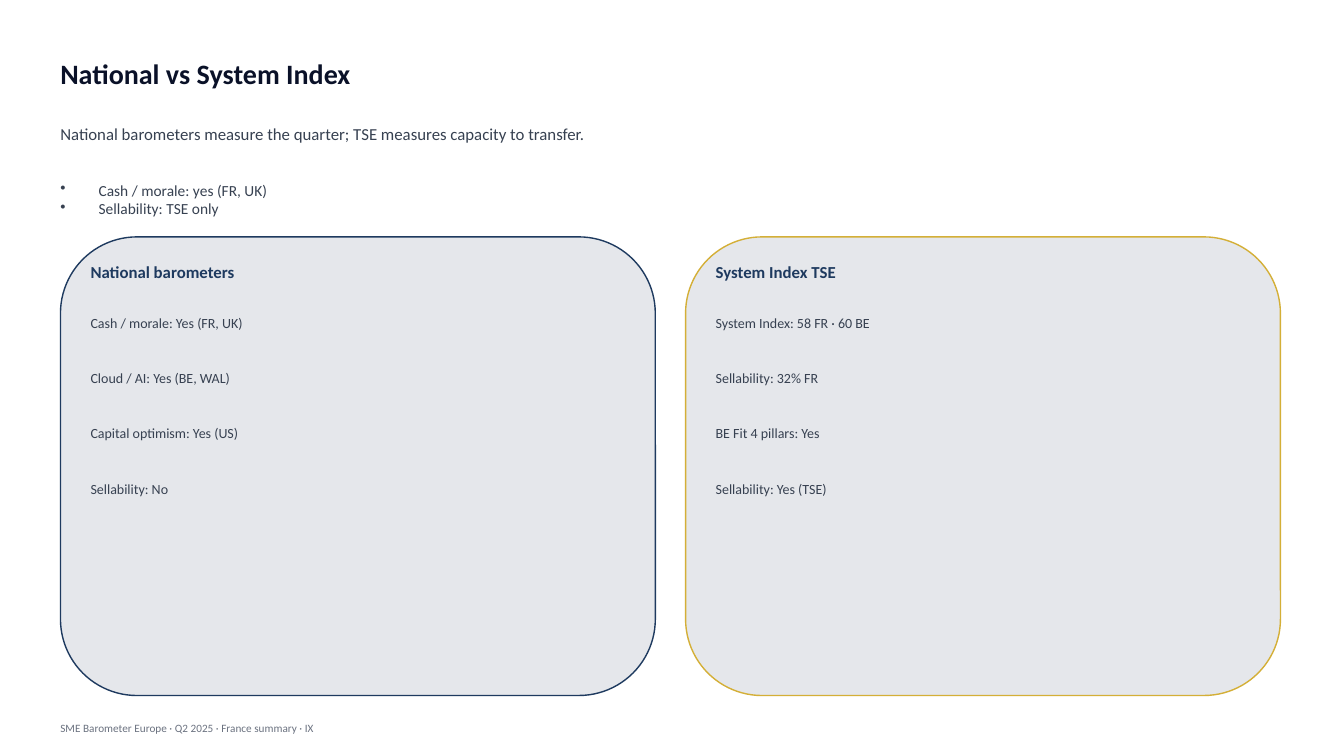
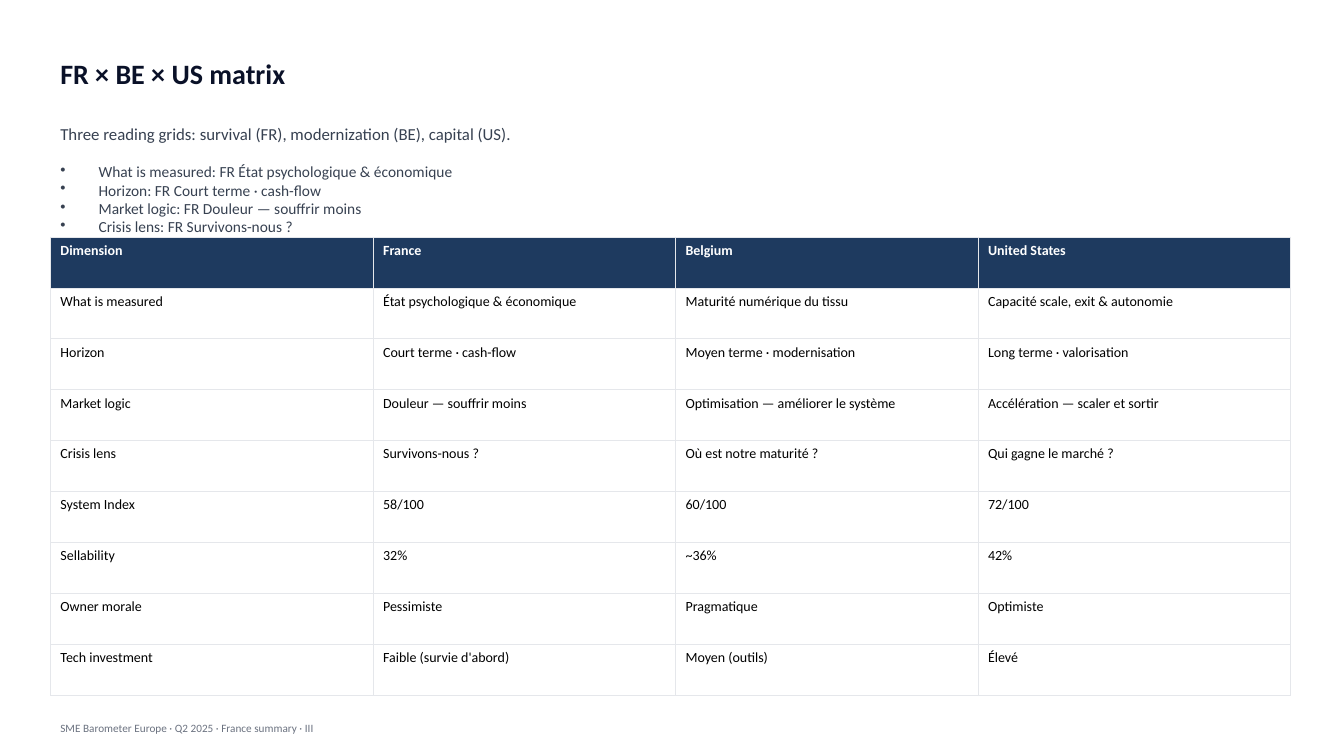
from dataclasses import dataclass

from lxml.etree import SubElement
from pptx import Presentation
from pptx.dml.color import RGBColor
from pptx.enum.shapes import MSO_SHAPE as Shape
from pptx.enum.text import MSO_ANCHOR as Anchor
from pptx.oxml.ns import qn
from pptx.slide import Slide
from pptx.table import _Cell as Cell
from pptx.text.text import _Paragraph as Paragraph
from pptx.util import Inches, Pt

COLORS = {
    "ink": "0A1128",
    "body": "374151",
    "muted": "6B7280",
    "navy": "1E3A5F",
    "gold": "D4AF37",
    "grey": "E5E7EB",
    "white": "FFFFFF",
    "black": "000000",
}
FONT = "Calibri"
LEFT, WIDTH = 0.5, 12.3
CONTENT_TOP, CONTENT_HEIGHT = 2.35, 4.55
FOOTER = "SME Barometer Europe · Q2 2025 · France summary · "


@dataclass(frozen=True)
class Style:
    size: float
    color: str
    bold: bool = False


TITLE = Style(20, "ink", True)
LEAD = Style(12, "body")
BULLET = Style(11, "body")
CARD_TITLE = Style(12, "navy", True)
CARD_LINE = Style(10, "body")
TABLE_HEAD = Style(10, "white", True)
TABLE_BODY = Style(10, "black")
FOOTNOTE = Style(8, "muted")


@dataclass(frozen=True)
class Area:
    left: float
    top: float
    width: float
    height: float

    def lengths(self) -> tuple[Inches, ...]:
        return tuple(Inches(n) for n in (self.left, self.top, self.width, self.height))


@dataclass(frozen=True)
class Card:
    title: str
    border: str
    lines: tuple[str, ...]


CARDS = (
    Card("National barometers", "navy", (
        "Cash / morale: Yes (FR, UK)",
        "Cloud / AI: Yes (BE, WAL)",
        "Capital optimism: Yes (US)",
        "Sellability: No",
    )),
    Card("System Index TSE", "gold", (
        "System Index: 58 FR · 60 BE",
        "Sellability: 32% FR",
        "BE Fit 4 pillars: Yes",
        "Sellability: Yes (TSE)",
    )),
)

COLUMN_WIDTHS = (3.2, 3, 3, 3.1)
MATRIX = (
    ("Dimension", "France", "Belgium", "United States"),
    ("What is measured", "État psychologique & économique",
     "Maturité numérique du tissu", "Capacité scale, exit & autonomie"),
    ("Horizon", "Court terme · cash-flow",
     "Moyen terme · modernisation", "Long terme · valorisation"),
    ("Market logic", "Douleur — souffrir moins",
     "Optimisation — améliorer le système", "Accélération — scaler et sortir"),
    ("Crisis lens", "Survivons-nous ?", "Où est notre maturité ?", "Qui gagne le marché ?"),
    ("System Index", "58/100", "60/100", "72/100"),
    ("Sellability", "32%", "~36%", "42%"),
    ("Owner morale", "Pessimiste", "Pragmatique", "Optimiste"),
    ("Tech investment", "Faible (survie d'abord)", "Moyen (outils)", "Élevé"),
)


def rgb(name: str) -> RGBColor:
    return RGBColor.from_string(COLORS[name])


def add_span(para: Paragraph, text: str, style: Style) -> None:
    span = para.add_run()
    span.text = text
    span.font.name = FONT
    span.font.size = Pt(style.size)
    span.font.bold = style.bold
    span.font.color.rgb = rgb(style.color)


def set_bullet(para: Paragraph) -> None:
    properties = para._p.get_or_add_pPr()
    properties.set("marL", str(Inches(0.38)))
    properties.set("indent", str(-Inches(0.38)))
    SubElement(properties, qn("a:buChar")).set("char", "•")


def add_text(page: Slide, area: Area, style: Style, *lines: str, bullets: bool = False) -> None:
    frame = page.shapes.add_textbox(*area.lengths()).text_frame
    frame.word_wrap = True
    frame.vertical_anchor = Anchor.MIDDLE
    for index, line in enumerate(lines):
        para = frame.add_paragraph() if index else frame.paragraphs[0]
        if bullets:
            set_bullet(para)
        add_span(para, line, style)


def add_page(deck: Presentation, title: str, lead: str, bullets: list[str], number: str) -> Slide:
    page = deck.slides.add_slide(deck.slide_layouts[6])
    add_text(page, Area(LEFT, 0.4, WIDTH, 0.65), TITLE, title)
    add_text(page, Area(LEFT, 1.05, WIDTH, 0.55), LEAD, lead)
    add_text(page, Area(LEFT, 1.55, WIDTH, 0.85), BULLET, *bullets, bullets=True)
    add_text(page, Area(LEFT, 7.05, WIDTH, 0.35), FOOTNOTE, FOOTER + number)
    return page


def add_card(page: Slide, card: Card, left: float) -> None:
    area = Area(left, CONTENT_TOP, 5.9, CONTENT_HEIGHT)
    panel = page.shapes.add_shape(Shape.ROUNDED_RECTANGLE, *area.lengths())
    panel.shadow.inherit = False
    panel.fill.solid()
    panel.fill.fore_color.rgb = rgb("grey")
    panel.line.color.rgb = rgb(card.border)
    panel.line.width = Pt(1)
    text_left, text_width = left + 0.2, area.width - 0.4
    add_text(page, Area(text_left, 2.5, text_width, 0.4), CARD_TITLE, card.title)
    for index, line in enumerate(card.lines):
        add_text(page, Area(text_left, 2.95 + index * 0.55, text_width, 0.5), CARD_LINE, line)


def set_borders(cell: Cell) -> None:
    properties = cell._tc.get_or_add_tcPr()
    for side in ("lnL", "lnR", "lnT", "lnB"):
        border = SubElement(properties, qn(f"a:{side}"))
        border.set("w", str(Pt(0.5)))
        fill = SubElement(border, qn("a:solidFill"))
        SubElement(fill, qn("a:srgbClr")).set("val", COLORS["grey"])


def add_matrix(page: Slide) -> None:
    area = Area(LEFT, CONTENT_TOP, WIDTH, CONTENT_HEIGHT)
    table = page.shapes.add_table(len(MATRIX), len(COLUMN_WIDTHS), *area.lengths()).table
    table.horz_banding = False
    for column, width in zip(table.columns, COLUMN_WIDTHS):
        column.width = Inches(width)
    for row_index, texts in enumerate(MATRIX):
        table.rows[row_index].height = Inches(CONTENT_HEIGHT / len(MATRIX))
        for column_index, text in enumerate(texts):
            cell = table.cell(row_index, column_index)
            set_borders(cell)
            if row_index == 0:
                cell.fill.solid()
                cell.fill.fore_color.rgb = rgb("navy")
            else:
                cell.fill.background()
            style = TABLE_BODY if row_index else TABLE_HEAD
            add_span(cell.text_frame.paragraphs[0], text, style)


def main() -> None:
    deck = Presentation()
    deck.slide_width, deck.slide_height = Inches(13.33), Inches(7.5)

    page = add_page(
        deck,
        "National vs System Index",
        "National barometers measure the quarter; TSE measures capacity to transfer.",
        ["Cash / morale: yes (FR, UK)", "Sellability: TSE only"],
        "IX",
    )
    for index, card in enumerate(CARDS):
        add_card(page, card, 0.6 + index * 6.2)

    page = add_page(
        deck,
        "FR × BE × US matrix",
        "Three reading grids: survival (FR), modernization (BE), capital (US).",
        [f"{dimension}: FR {france}" for dimension, france, *_ in MATRIX[1:5]],
        "III",
    )
    add_matrix(page)

    deck.save("out.pptx")


if __name__ == "__main__":
    main()
